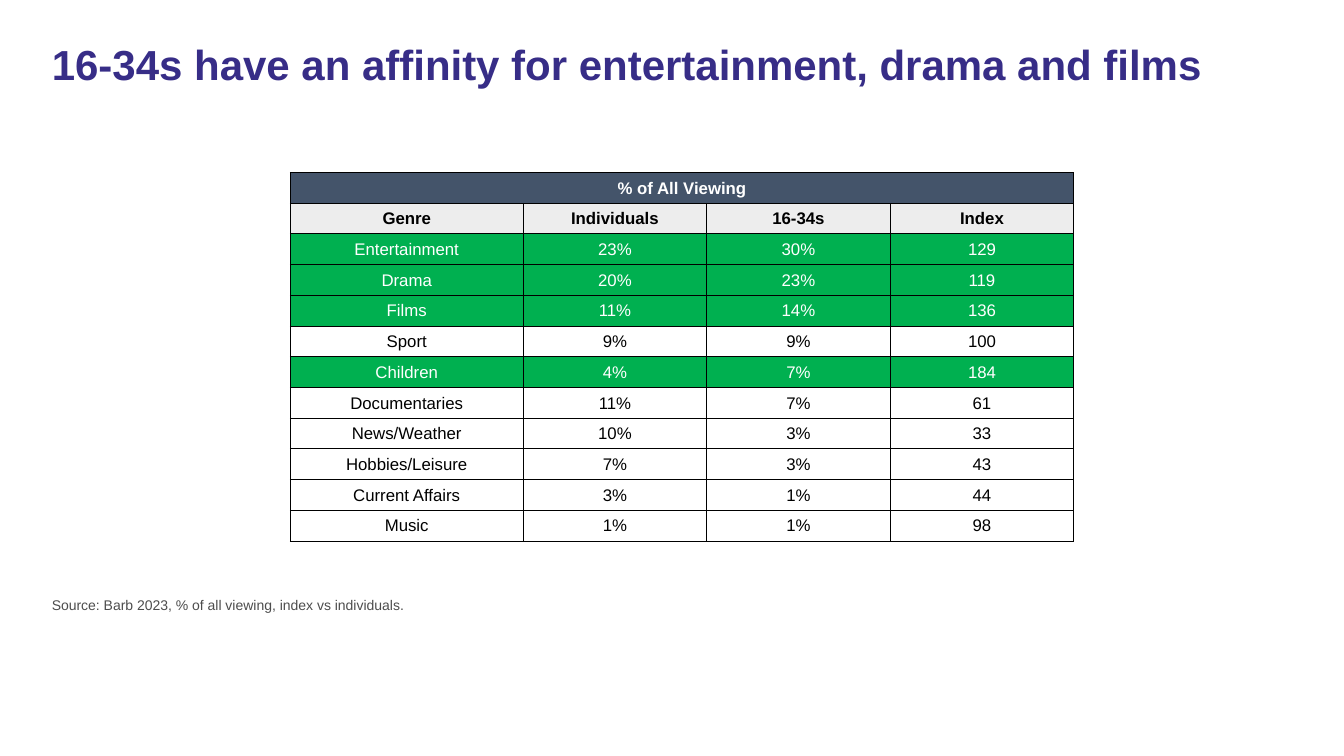
from dataclasses import dataclass

from lxml import etree
from pptx import Presentation
from pptx.dml.color import RGBColor
from pptx.enum.text import MSO_ANCHOR, MSO_AUTO_SIZE, PP_ALIGN
from pptx.oxml.ns import qn
from pptx.util import Inches, Pt

LEFT, CENTER = PP_ALIGN.LEFT, PP_ALIGN.CENTER
TOP, MIDDLE = MSO_ANCHOR.TOP, MSO_ANCHOR.MIDDLE
FIXED = MSO_AUTO_SIZE.NONE

WIDE, HIGH = Inches(13.33), Inches(7.5)
FONT = "Arial"
WHITE, BLACK = "FFFFFF", "000000"
PURPLE, GREY = "372D87", "4D4D4D"
SLATE, PALE, GREEN = "44546A", "EDEDED", "00B050"
RULE = Pt(0.5)


@dataclass
class Box:
    """Place and size, in percent of the slide's width and height."""
    x: float
    y: float
    w: float
    h: float

    def place(self) -> tuple[int, int, int, int]:
        return (int(WIDE * self.x / 100), int(HIGH * self.y / 100),
                int(WIDE * self.w / 100), int(HIGH * self.h / 100))


@dataclass
class Row:
    """One table row with its look."""
    cells: tuple[str, ...]
    fill: str = WHITE
    ink: str = BLACK
    bold: bool = False


TITLE = Box(3.1, 5.2, 93, 15)
TABLE = Box(21.6, 22.8, 58.3, 48.8)
NOTE = Box(3.1, 78.27, 93, 4.4)
SHARES = (2.31, 1.82, 1.82, 1.82)


def genre(name: str, people: int, young: int, index: int) -> Row:
    """A genre row, green where the index shows an affinity."""
    cells = (name, f"{people}%", f"{young}%", str(index))
    return Row(cells, GREEN, WHITE) if index > 100 else Row(cells)


ROWS = (
    Row(("% of All Viewing",), SLATE, WHITE, True),
    Row(("Genre", "Individuals", "16-34s", "Index"), PALE, BLACK, True),
    genre("Entertainment", 23, 30, 129),
    genre("Drama", 20, 23, 119),
    genre("Films", 11, 14, 136),
    genre("Sport", 9, 9, 100),
    genre("Children", 4, 7, 184),
    genre("Documentaries", 11, 7, 61),
    genre("News/Weather", 10, 3, 33),
    genre("Hobbies/Leisure", 7, 3, 43),
    genre("Current Affairs", 3, 1, 44),
    genre("Music", 1, 1, 98),
)


def tint(code: str) -> RGBColor:
    return RGBColor.from_string(code)


def write(frame, text: str, *, size: float, ink: str, bold: bool = False,
          align=LEFT, lead: float = 1.0) -> None:
    """Fill a text frame with one formatted paragraph."""
    para = frame.paragraphs[0]
    para.alignment, para.line_spacing = align, lead
    para.space_before = Pt(0)
    run = para.add_run()
    run.text = text
    font = run.font
    font.name, font.size, font.bold = FONT, Pt(size), bold
    font.color.rgb = tint(ink)


def hold(shape, box: Box, text: str, **style) -> None:
    """Move a placeholder and write its text, without a bullet."""
    shape.left, shape.top, shape.width, shape.height = box.place()
    frame = shape.text_frame
    frame.word_wrap, frame.auto_size = True, FIXED
    frame.vertical_anchor = TOP
    props = frame.paragraphs[0]._p.get_or_add_pPr()
    props.set("marL", "0")
    props.set("indent", "0")
    etree.SubElement(props, qn("a:buNone"))
    write(frame, text, **style)


def edge(cell) -> None:
    """Draw a thin black line on all four sides of a cell."""
    props = cell._tc.get_or_add_tcPr()
    for side in ("lnL", "lnR", "lnT", "lnB"):
        line = etree.SubElement(props, qn(f"a:{side}"), w=str(RULE))
        fill = etree.SubElement(line, qn("a:solidFill"))
        etree.SubElement(fill, qn("a:srgbClr"), val=BLACK)


def grid(slide, box: Box, rows: tuple[Row, ...]) -> None:
    """Build the table, with a merged heading across the top."""
    x, y, w, h = box.place()
    table = slide.shapes.add_table(len(rows), len(SHARES), x, y, w, h).table
    table.first_row = table.horz_banding = False
    for col, share in zip(table.columns, SHARES):
        col.width = int(w * share / sum(SHARES))
    for line, row in zip(table.rows, rows):
        line.height = h // len(rows)
        for cell in line.cells:
            cell.margin_left = cell.margin_right = Inches(0.01)
            cell.margin_top, cell.margin_bottom = Inches(0.01), 0
            cell.vertical_anchor = MIDDLE
            edge(cell)
            cell.fill.solid()
            cell.fill.fore_color.rgb = tint(row.fill)
        for cell, text in zip(line.cells, row.cells):
            write(cell.text_frame, text, size=12, ink=row.ink,
                  bold=row.bold, align=CENTER)
    table.cell(0, 0).merge(table.cell(0, len(SHARES) - 1))


def main() -> None:
    deck = Presentation()
    deck.slide_width, deck.slide_height = WIDE, HIGH
    slide = deck.slides.add_slide(deck.slide_layouts[1])

    # Title and source note
    hold(slide.shapes.title, TITLE,
         "16-34s have an affinity for entertainment, drama and films",
         size=30, ink=PURPLE, bold=True, lead=0.9)
    hold(slide.placeholders[1], NOTE,
         "Source: Barb 2023, % of all viewing, index vs individuals.",
         size=10, ink=GREY)

    # Viewing by genre
    grid(slide, TABLE, ROWS)
    deck.save("out.pptx")


if __name__ == "__main__":
    main()
